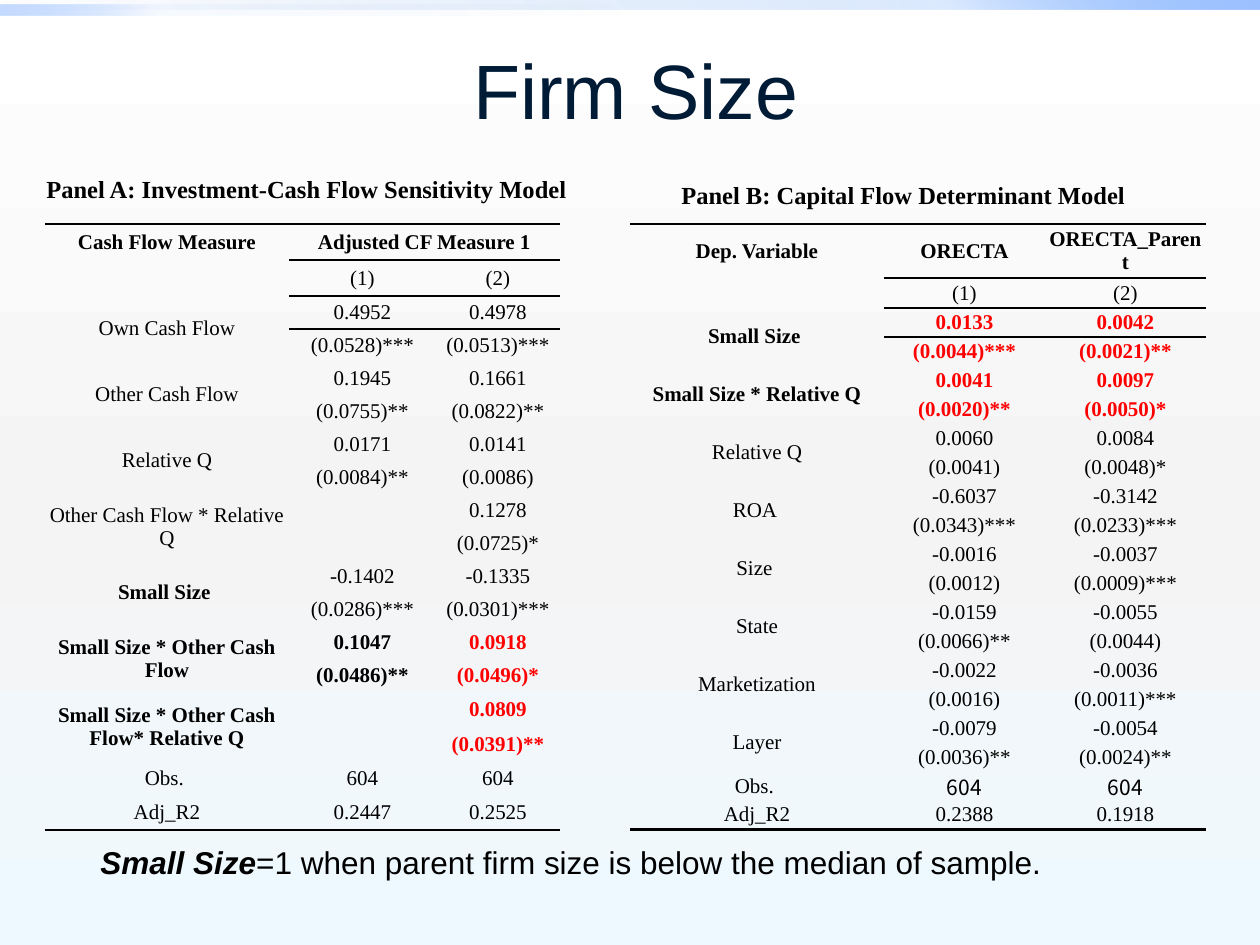
"""Build the Firm Size slide with two regression tables."""
from dataclasses import dataclass
from typing import NamedTuple, Optional

from lxml import etree
from pptx import Presentation
from pptx import util as u
from pptx.dml.color import RGBColor
from pptx.enum import shapes, text
from pptx.oxml import ns

PX_PER_INCH = 126
NO_STYLE = "{2D5ABB26-0587-4C30-8999-92F81FD0307C}"


@dataclass(frozen=True)
class Theme:
    sans: str = "Arial"
    serif: str = "Times New Roman"
    cjk: str = "Noto Sans CJK SC"
    black: str = "000000"
    navy: str = "001B36"
    red: str = "FF0000"
    title: int = 44
    note: int = 18
    caption: int = 14
    cell: int = 12
    rule: float = 1.5


T = Theme()


class Stop(NamedTuple):
    pos: int
    color: str
    opacity: int = 100


class Box(NamedTuple):
    x: int
    y: int
    w: int
    h: int


class Run(NamedTuple):
    text: str
    size: int = T.cell
    bold: bool = False
    color: str = T.black
    font: str = T.serif
    italic: bool = False


class Bar(NamedTuple):
    box: Box
    stops: list[Stop]
    angle: int


class Entry(NamedTuple):
    label: Run
    coefs: list[Optional[Run]]
    errors: list[Optional[Run]]


class Panel(NamedTuple):
    caption: Run
    caption_box: Box
    x: int
    y: int
    cols: list[int]
    rows: list[int]
    header: list[Optional[Run]]
    entries: list[Entry]
    footer: list[list[Run]]


def px(n: int) -> u.Emu:
    return u.Inches(n / PX_PER_INCH)


def bold(value: str) -> Run:
    return Run(value, bold=True)


def red(value: str) -> Run:
    return Run(value, bold=True, color=T.red)


def entry(label: str, coefs: str, errors: str, style=Run, label_style=Run) -> Entry:
    """Make an entry from space-separated values."""
    return Entry(label_style(label), [style(v) for v in coefs.split()],
                 [style(v) for v in errors.split()])


def put_gradient(fill, parent, stops: list[Stop], angle: int) -> None:
    """Swap a solid fill for a linear gradient."""
    fill.solid()
    solid = parent.find(ns.qn("a:solidFill"))
    grad = etree.Element(ns.qn("a:gradFill"), rotWithShape="1")
    gs_list = etree.SubElement(grad, ns.qn("a:gsLst"))
    for stop in stops:
        gs = etree.SubElement(gs_list, ns.qn("a:gs"), pos=str(stop.pos * 1000))
        clr = etree.SubElement(gs, ns.qn("a:srgbClr"), val=stop.color)
        if stop.opacity < 100:
            etree.SubElement(clr, ns.qn("a:alpha"), val=str(stop.opacity * 1000))
    etree.SubElement(grad, ns.qn("a:lin"), ang=str(angle * 60000), scaled="0")
    parent.replace(solid, grad)


def add_bar(s, bar: Bar) -> None:
    sp = s.shapes.add_shape(shapes.MSO_SHAPE.RECTANGLE, *map(px, bar.box))
    sp.shadow.inherit = False
    sp.line.fill.background()
    put_gradient(sp.fill, sp._element.spPr, bar.stops, bar.angle)


def add_run(p, run: Run) -> None:
    r = p.add_run()
    r.text = run.text
    r.font.size = u.Pt(run.size)
    r.font.name = run.font
    r.font.bold = run.bold
    r.font.italic = run.italic
    r.font.color.rgb = RGBColor.from_string(run.color)


def add_text(s, box: Box, runs: list[Run], align=text.PP_ALIGN.LEFT,
             anchor=text.MSO_ANCHOR.TOP) -> None:
    tf = s.shapes.add_textbox(*map(px, box)).text_frame
    tf.word_wrap = True
    tf.vertical_anchor = anchor
    p = tf.paragraphs[0]
    p.alignment = align
    for run in runs:
        add_run(p, run)


def add_rule(cell, side: str) -> None:
    ln = etree.SubElement(cell._tc.get_or_add_tcPr(), ns.qn(f"a:ln{side}"),
                          w=str(u.Pt(T.rule)))
    fill = etree.SubElement(ln, ns.qn("a:solidFill"))
    etree.SubElement(fill, ns.qn("a:srgbClr"), val=T.black)


def fill_cell(cell, run: Optional[Run]) -> None:
    cell.margin_left = cell.margin_right = px(2)
    cell.margin_top = cell.margin_bottom = 0
    cell.vertical_anchor = text.MSO_ANCHOR.MIDDLE
    cell.fill.background()
    p = cell.text_frame.paragraphs[0]
    p.alignment = text.PP_ALIGN.CENTER
    if run:
        add_run(p, run)
    else:
        etree.SubElement(p._p, ns.qn("a:endParaRPr"), sz=str(T.cell * 100))


def add_panel(s, panel: Panel) -> None:
    """Draw a caption and its ruled table."""
    add_text(s, panel.caption_box, [panel.caption])
    grid = [panel.header, [None, Run("(1)"), Run("(2)")]]
    for e in panel.entries:
        grid += [[e.label, *e.coefs], [None, *e.errors]]
    grid += panel.footer
    table = s.shapes.add_table(len(grid), len(panel.cols), px(panel.x), px(panel.y),
                               px(sum(panel.cols)), px(sum(panel.rows))).table
    table.first_row = table.horz_banding = False
    table._tbl.tblPr.find(ns.qn("a:tableStyleId")).text = NO_STYLE
    for column, width in zip(table.columns, panel.cols):
        column.width = px(width)
    for row, height in zip(table.rows, panel.rows):
        row.height = px(height)
    last = len(grid) - 1
    for i, runs in enumerate(grid):
        for j, run in enumerate(runs):
            cell = table.cell(i, j)
            if i == 0 or (i <= 2 and j):
                add_rule(cell, "T")
            if i == last or (i <= 1 and j):
                add_rule(cell, "B")
            fill_cell(cell, run)
    if panel.header[2] is None:
        table.cell(0, 1).merge(table.cell(0, 2))
    for i in range(2, 2 + 2 * len(panel.entries), 2):
        table.cell(i, 0).merge(table.cell(i + 1, 0))


BACKDROP = [Stop(0, "FFFFFF"), Stop(55, "F4F4F4"), Stop(100, "EEF9FF")]
BARS = [
    Bar(Box(0, 0, 1260, 10), [Stop(0, "0058B7", 0), Stop(75, "4F95FF", 20), Stop(100, "9EC2FF")], 315),
    Bar(Box(0, 5, 630, 10), [Stop(0, "0058B7", 0), Stop(75, "4F95FF", 5), Stop(100, "9EC2FF", 60)], 135),
]
PANELS = [
    Panel(Run("Panel B: Capital Flow Determinant Model", T.caption, True),
          Box(669, 174, 517, 43), 630, 224, [254, 161, 161], [54, 30] + [29] * 18,
          [bold("Dep. Variable"), bold("ORECTA"), bold("ORECTA_Parent")],
          [entry("Small Size ", "0.0133 0.0042", "(0.0044)*** (0.0021)**", red, bold),
           entry("Small Size * Relative Q", "0.0041 0.0097", "(0.0020)** (0.0050)*", red, bold),
           entry("Relative Q", "0.0060 0.0084", "(0.0041) (0.0048)*"),
           entry("ROA ", "-0.6037 -0.3142", "(0.0343)*** (0.0233)***"),
           entry("Size ", "-0.0016 -0.0037", "(0.0012) (0.0009)***"),
           entry("State", "-0.0159 -0.0055", "(0.0066)** (0.0044)"),
           entry("Marketization", "-0.0022 -0.0036", "(0.0016) (0.0011)***"),
           entry("Layer", "-0.0079 -0.0054", "(0.0036)** (0.0024)**")],
          [[Run("Obs. "), Run("604", font=T.cjk), Run("604", font=T.cjk)],
           [Run("Adj_R2"), Run("0.2388"), Run("0.1918")]]),
    Panel(Run("Panel A: Investment-Cash Flow Sensitivity Model", T.caption, True),
          Box(34, 168, 620, 43), 45, 224, [244, 147, 124],
          [36, 36] + [33] * 12 + [35, 35, 34, 34],
          [bold("Cash Flow Measure"), bold("Adjusted CF Measure 1"), None],
          [entry("Own Cash Flow", "0.4952 0.4978", "(0.0528)*** (0.0513)***"),
           entry("Other Cash Flow", "0.1945 0.1661", "(0.0755)** (0.0822)**"),
           entry("Relative Q", "0.0171 0.0141", "(0.0084)** (0.0086)"),
           Entry(Run("Other Cash Flow * Relative Q"), [None, Run("0.1278")], [None, Run("(0.0725)*")]),
           entry("Small Size ", "-0.1402 -0.1335", "(0.0286)*** (0.0301)***", label_style=bold),
           Entry(bold("Small Size * Other Cash Flow"), [bold("0.1047"), red("0.0918")],
                 [bold("(0.0486)**"), red("(0.0496)*")]),
           Entry(bold("Small Size * Other Cash Flow* Relative Q"), [None, red("0.0809")],
                 [None, red("(0.0391)**")])],
          [[Run("Obs. "), Run("604"), Run("604")],
           [Run("Adj_R2"), Run("0.2447"), Run("0.2525")]]),
]


def main() -> None:
    prs = Presentation()
    prs.slide_width, prs.slide_height = px(1260), px(945)
    s = prs.slides.add_slide(prs.slide_layouts[6])
    fill = s.background.fill
    put_gradient(fill, s._element.cSld.find(ns.qn("p:bg")).find(ns.qn("p:bgPr")), BACKDROP, 90)
    for bar in BARS:
        add_bar(s, bar)
    add_text(s, Box(69, 29, 1134, 120), [Run("Firm Size", T.title, color=T.navy, font=T.sans)],
             text.PP_ALIGN.CENTER, text.MSO_ANCHOR.MIDDLE)
    for panel in PANELS:
        add_panel(s, panel)
    add_text(s, Box(88, 837, 1063, 50), [
        Run("Small Size", T.note, True, font=T.sans, italic=True),
        Run("=1 when parent firm size is below the median of sample.", T.note, font=T.sans)])
    prs.save("out.pptx")


if __name__ == "__main__":
    main()
